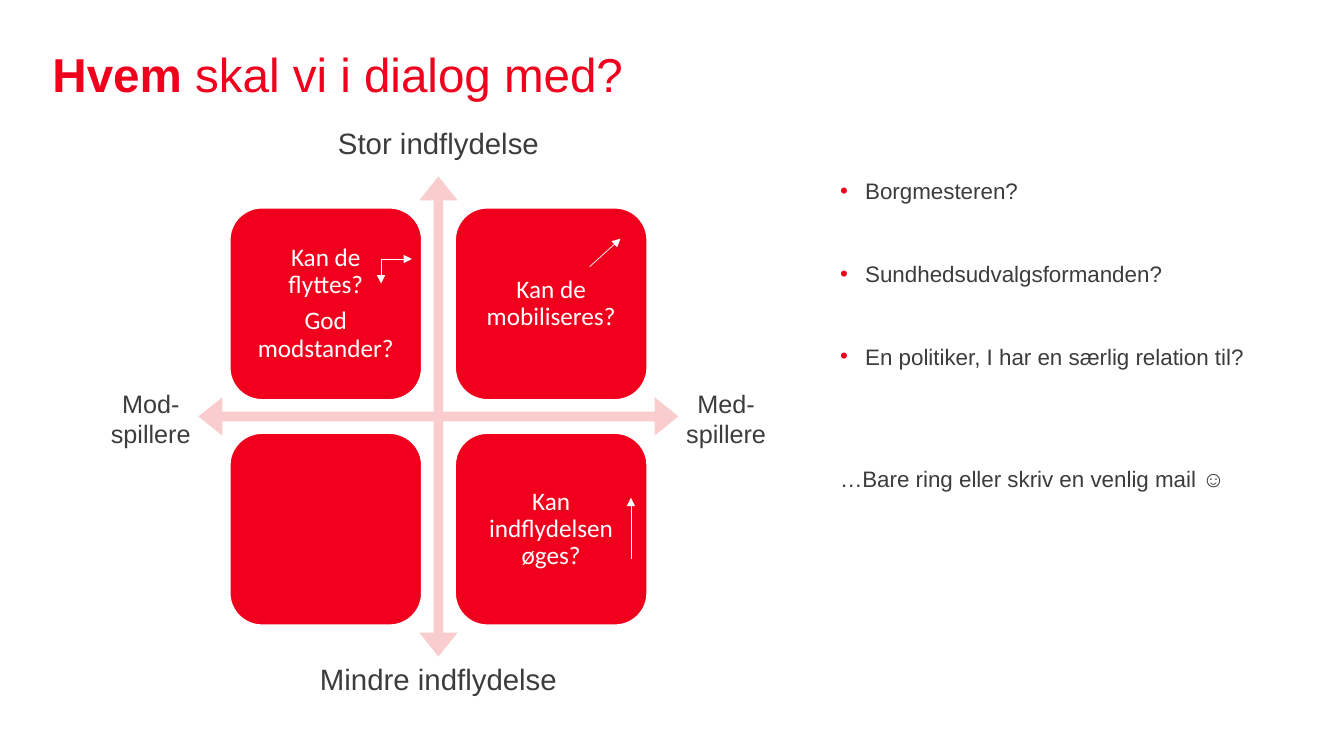
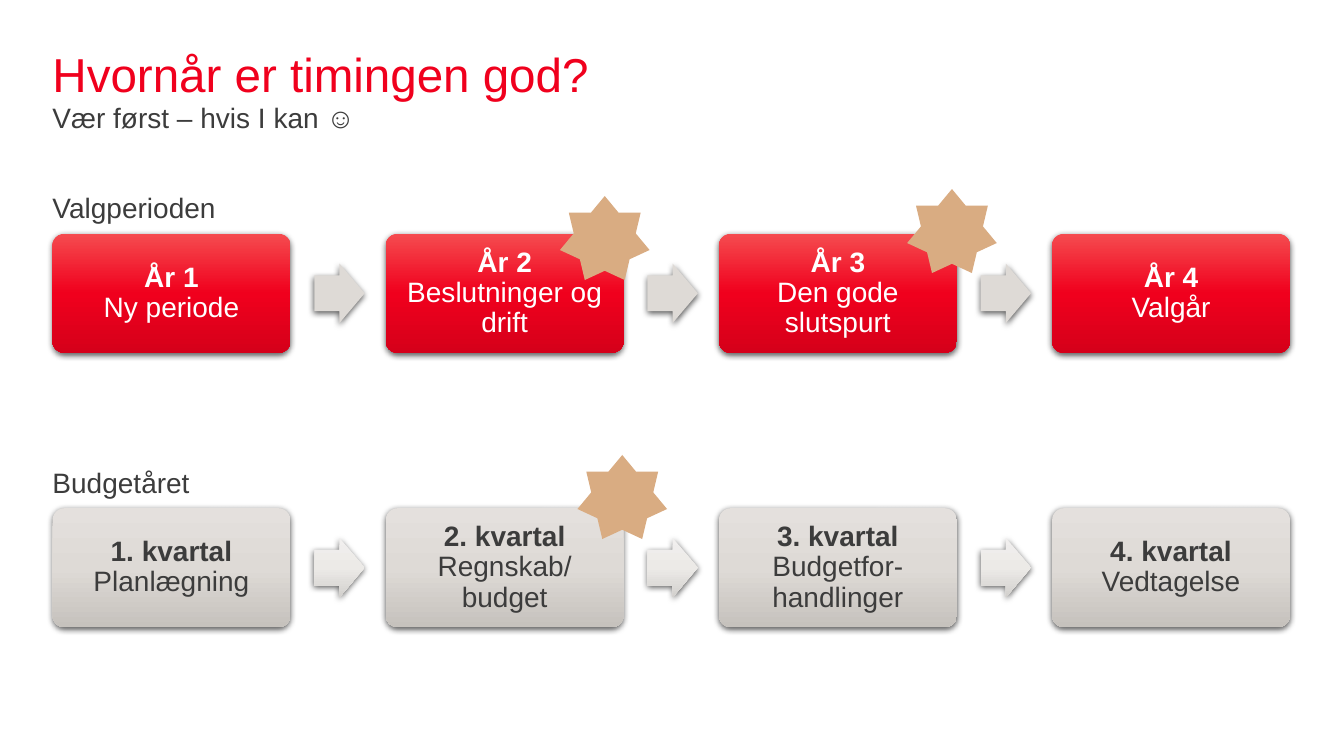
from lxml import etree
from pptx import Presentation
from pptx.dml.color import RGBColor
from pptx.enum.shapes import MSO_CONNECTOR, MSO_SHAPE
from pptx.enum.text import MSO_ANCHOR, PP_ALIGN
from pptx.oxml import parse_xml
from pptx.oxml.ns import qn
from pptx.util import Pt

COLORS = {
    "red": "F0001D", "text": "3C3C3C", "white": "FFFFFF", "pink": "F9CCCD",
    "sand": "DEDAD6", "tan": "D9AC82", "shadow": "000000",
}
GRADIENTS = {
    "red": ("F54B4F", "F0001D", "D5001A"),
    "sand": ("E4E0DD", "DEDAD6", "C6C2BD"),
    "light": ("F1EFEE", "ECEAE7", "D2D0CD"),
}
DRAWING = 'xmlns:a="http://schemas.openxmlformats.org/drawingml/2006/main"'
MARGIN, CONTENT_WIDTH = 37.5, 884


# Shared helpers
def apply(target, values):
    for name, value in values.items():
        setattr(target, name, value)


def color(name):
    return RGBColor.from_string(COLORS[name])


def margins(size):
    return {f"margin_{side}": Pt(size) for side in ("left", "top", "right", "bottom")}


def add_runs(paragraph, runs, font, font_color):
    """Write (text, bold) runs; a line feed in the text becomes a line break."""
    for text, bold in runs:
        for index, line in enumerate(text.split("\n")):
            if index:
                paragraph.add_line_break()
            if line:
                run = paragraph.add_run()
                run.text = line
                apply(run.font, {"name": "Arial", "bold": bold, **font})
                run.font.color.rgb = color(font_color)


def write(frame, paragraphs, font, font_color="text", layout=None, inset=0, anchor=MSO_ANCHOR.TOP):
    apply(frame, {"word_wrap": True, "vertical_anchor": anchor, **margins(inset)})
    for index, runs in enumerate(paragraphs):
        paragraph = frame.add_paragraph() if index else frame.paragraphs[0]
        apply(paragraph, layout or {})
        add_runs(paragraph, runs, font, font_color)


def add_text(slide, box, paragraphs, font, **options):
    frame = slide.shapes.add_textbox(*map(Pt, box)).text_frame
    write(frame, paragraphs, font, **options)
    return frame


def add_shape(slide, kind, box, fill=None, gradient=None, adjustments=()):
    shape = slide.shapes.add_shape(kind, *map(Pt, box))
    for index, value in enumerate(adjustments):
        shape.adjustments[index] = value
    if gradient:
        stops = "".join(
            f'<a:gs pos="{index * 50000}"><a:srgbClr val="{value}"/></a:gs>'
            for index, value in enumerate(GRADIENTS[gradient]))
        shape._element.spPr.find(qn("a:prstGeom")).addnext(parse_xml(
            f'<a:gradFill {DRAWING} rotWithShape="1"><a:gsLst>{stops}</a:gsLst>'
            '<a:lin ang="5400000" scaled="0"/></a:gradFill>'))
    else:
        shape.fill.solid()
        shape.fill.fore_color.rgb = color(fill)
    shape.line.fill.background()
    shape.shadow.inherit = False
    return shape


def add_shadow(shape):
    shape._element.spPr.find(qn("a:effectLst")).append(parse_xml(
        f'<a:outerShdw {DRAWING} blurRad="57150" dist="19050" dir="5400000" algn="ctr" '
        f'rotWithShape="0"><a:srgbClr val="{COLORS["shadow"]}"><a:alpha val="63000"/>'
        '</a:srgbClr></a:outerShdw>'))


def add_arrow(slide, start, end):
    connector = slide.shapes.add_connector(MSO_CONNECTOR.STRAIGHT, *map(Pt, start + end))
    connector.line.width = Pt(0.5)
    connector.line.color.rgb = color("white")
    etree.SubElement(connector.line._get_or_add_ln(), qn("a:tailEnd"), type="triangle")
    etree.SubElement(connector._element.spPr, qn("a:effectLst"))


def add_bullet(paragraph):
    properties = paragraph._p.get_or_add_pPr()
    properties.set("marL", str(Pt(18)))
    properties.set("indent", str(-Pt(18)))
    bullet_color = etree.SubElement(properties, qn("a:buClr"))
    etree.SubElement(bullet_color, qn("a:srgbClr"), val=COLORS["red"])
    etree.SubElement(properties, qn("a:buFont"), typeface="Arial")
    etree.SubElement(properties, qn("a:buChar"), char="•")


def add_titled_slide(presentation, title_runs):
    slide = presentation.slides.add_slide(presentation.slide_layouts[6])
    add_text(slide, (MARGIN, 34.5, CONTENT_WIDTH, 40.5), [title_runs], {"size": Pt(34)},
             font_color="red", layout={"line_spacing": 0.9}, anchor=MSO_ANCHOR.MIDDLE)
    return slide


# Influence matrix: axes, four cells with small arrows, axis labels
CELLS = [
    (["Kan de\nflyttes?", "God modstander?"],
     [((108, 36.5), (130, 36.5)), ((108, 36.5), (108, 54))]),
    (["Kan de mobiliseres?"], [((96, 42), (118, 22))]),
    ([], []),
    (["Kan indflydelsen øges?"], [((125.5, 90), (125.5, 46))]),
]


def add_matrix(slide, left, top, size):
    cell_size, gap = 137, 24
    edge = (size - 2 * cell_size - gap) / 2
    add_shape(slide, MSO_SHAPE.QUAD_ARROW, (left, top, size, size), "pink",
              adjustments=(0.02, 0.04, 0.05))

    for index, (texts, arrows) in enumerate(CELLS):
        row, column = divmod(index, 2)
        x = left + edge + column * (cell_size + gap)
        y = top + edge + row * (cell_size + gap)
        cell = add_shape(slide, MSO_SHAPE.ROUNDED_RECTANGLE, (x, y, cell_size, cell_size), "red")
        cell.line.color.rgb = color("white")
        cell.line.width = Pt(1)
        write(cell.text_frame, [[(text, False)] for text in texts],
              {"name": "Calibri", "size": Pt(18)}, "white",
              {"alignment": PP_ALIGN.CENTER, "line_spacing": 0.9, "space_after": Pt(6.3)},
              inset=5, anchor=MSO_ANCHOR.MIDDLE)
        for start, end in arrows:
            add_arrow(slide, (x + start[0], y + start[1]), (x + end[0], y + end[1]))

    labels = [
        ("Stor indflydelse", 21, size / 2, -40, 297, 32),
        ("Mindre indflydelse", 21, size / 2, size, 297, 32),
        ("Med-\nspillere", 18, size + 34, 147.5, 100, 51),
        ("Mod-\nspillere", 18, -34, 147.5, 100, 51),
    ]
    for text, font_size, center, offset, width, height in labels:
        add_text(slide, (left + center - width / 2, top + offset, width, height),
                 [[(text, False)]], {"size": Pt(font_size)},
                 layout={"alignment": PP_ALIGN.CENTER}, inset=3.6)


# Question list: bullets, then a closing line
def add_questions(slide, box):
    questions = ["Borgmesteren?", "Sundhedsudvalgsformanden?",
                 "En politiker, I har en særlig relation til?"]
    closing = "…Bare ring eller skriv en venlig mail ☺"
    frame = add_text(slide, box, [[(text, False)] for text in questions + [closing]],
                     {"size": Pt(16)})
    for paragraph in frame.paragraphs[:-1]:
        add_bullet(paragraph)
    for paragraph, space in zip(frame.paragraphs[1:], (40, 40, 68)):
        paragraph.space_before = Pt(space)


# Process row: heading, cards joined by arrows, stars on the key cards
def add_process(slide, left, top, heading, steps, gradient, font_color, arrow_fill, stars):
    card_width, card_height, pitch = 170, 85, 238
    arrow_width, arrow_height, arrow_offset = 36, 42.5, 187
    add_text(slide, (left, top - 28, CONTENT_WIDTH, 28), [[(heading, False)]],
             {"size": Pt(20)}, layout={"line_spacing": 0.9})

    for index, (name, detail) in enumerate(steps):
        x = left + index * pitch
        card = add_shape(slide, MSO_SHAPE.ROUNDED_RECTANGLE, (x, top, card_width, card_height),
                         gradient=gradient, adjustments=(0.1,))
        add_shadow(card)
        write(card.text_frame, [[(name + "\n", True), (detail, False)]], {"size": Pt(20)},
              font_color, {"alignment": PP_ALIGN.CENTER, "line_spacing": 0.9},
              inset=6, anchor=MSO_ANCHOR.MIDDLE)
        if index < len(steps) - 1:
            arrow_top = top + (card_height - arrow_height) / 2
            arrow = add_shape(slide, MSO_SHAPE.RIGHT_ARROW,
                              (x + arrow_offset, arrow_top, arrow_width, arrow_height),
                              adjustments=(0.6, 0.5), **arrow_fill)
            add_shadow(arrow)

    for index, x_offset, y_offset in stars:
        add_shape(slide, MSO_SHAPE.STAR_7_POINT,
                  (left + index * pitch + x_offset, top + y_offset, 64, 60), "tan")


def build_dialogue_slide(presentation):
    slide = add_titled_slide(presentation, [("Hvem ", True), ("skal vi i dialog med?", False)])
    add_questions(slide, (600, 126.5, 322, 350))
    add_matrix(slide, 141.7, 126, 343)


def build_timing_slide(presentation):
    slide = add_titled_slide(presentation, [("Hvornår er timingen god?", False)])
    add_text(slide, (MARGIN, 72, CONTENT_WIDTH, 28), [[("Vær først – hvis I kan ☺", False)]],
             {"size": Pt(20)})
    add_process(slide, MARGIN, 167, "Valgperioden",
                [("År 1", "Ny periode"), ("År 2", "Beslutninger og drift"),
                 ("År 3", "Den gode slutspurt"), ("År 4", "Valgår")],
                "red", "white", {"fill": "sand"}, [(1, 124.5, -27), (2, 134.5, -32)])
    add_process(slide, MARGIN, 363, "Budgetåret",
                [("1. kvartal", "Planlægning"), ("2. kvartal", "Regnskab/\nbudget"),
                 ("3. kvartal", "Budgetfor-handlinger"), ("4. kvartal", "Vedtagelse")],
                "sand", "text", {"gradient": "light"}, [(1, 137, -38)])


def main():
    presentation = Presentation()
    apply(presentation, {"slide_width": Pt(960), "slide_height": Pt(540)})
    build_dialogue_slide(presentation)
    build_timing_slide(presentation)
    presentation.save("out.pptx")


if __name__ == "__main__":
    main()
